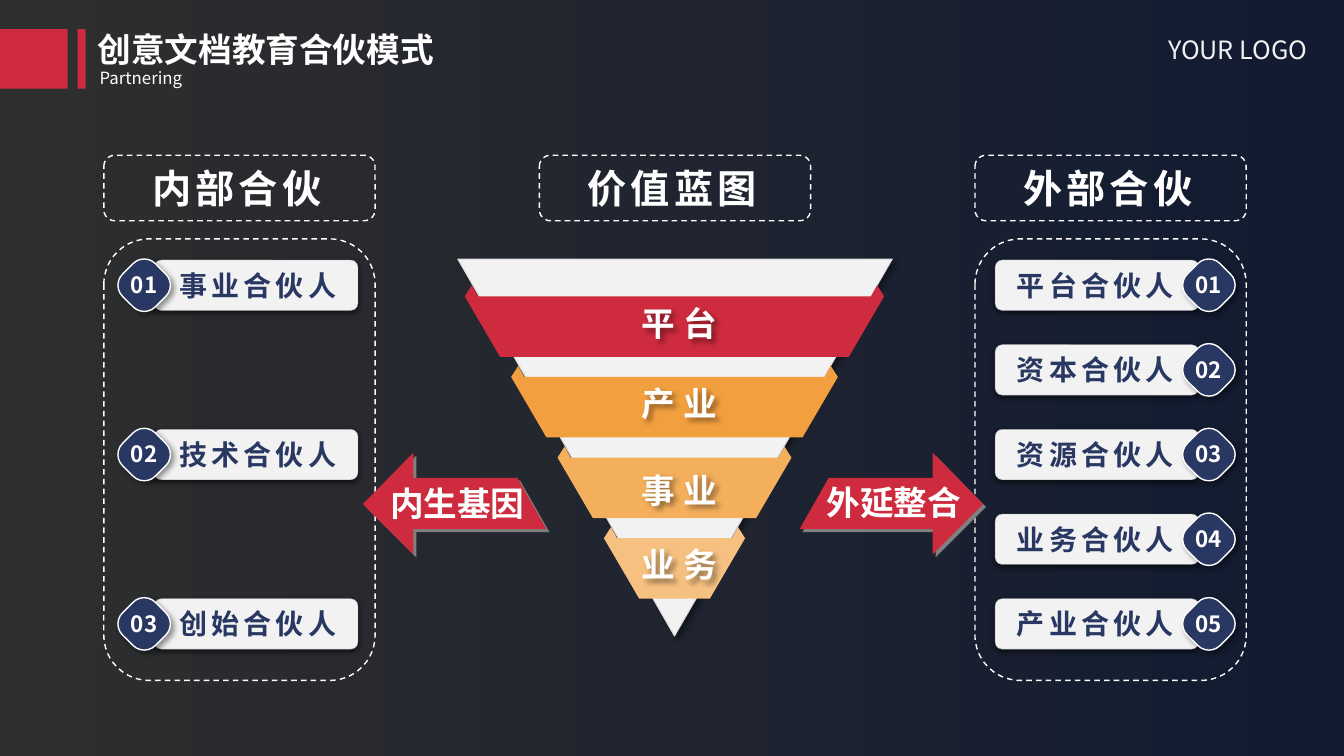
from lxml import etree
from pptx import Presentation, util as u
from pptx.dml.color import RGBColor
from pptx.enum import shapes, text
from pptx.oxml.ns import qn

WIDE, HIGH = 13.33, 7.5
SANS = "Noto Sans CJK SC"
RED, NAVY, PALE, WHITE = "CE2B3E", "293862", "F2F2F2", "FFFFFF"
RECT, ROUND = shapes.MSO_SHAPE.RECTANGLE, shapes.MSO_SHAPE.ROUNDED_RECTANGLE
LEFT, MID = text.PP_ALIGN.LEFT, text.PP_ALIGN.CENTER

HEADS = [("内部合伙", 1.03), ("价值蓝图", 5.35), ("外部合伙", 9.67)]
PANELS = [
    (1.03, 1.53, 1.60, 1.20, 2, ["事业合伙人", "技术合伙人", "创始合伙人"]),
    (9.67, 9.87, 9.91, 11.76, 1,
     ["平台合伙人", "资本合伙人", "资源合伙人", "业务合伙人", "产业合伙人"]),
]
BANDS = [("平台", RED, 2.96), ("产业", "F29F3F", 3.75),
         ("事业", "F4AF5C", 4.61), ("业务", "F6C180", 5.35)]
ARROW = [(3.6, 5), (4.1, 4.49), (4.1, 4.74), (5.13, 4.74),
         (5.42, 5.25), (4.1, 5.25), (4.1, 5.5)]
ARROWS = [("内生基因", False, 3.65, 4.74, 1.77), ("外延整合", True, 8.03, 4.73, 1.67)]
AXIS, ROW = 6.69, 0.84
SOFT = ("000000", 40, 4, 3, 45)
LOW = ("000000", 63, 4.5, 1.5, 90)
HARD = ("808080", 100, 0, 3, 45)

deck = Presentation()
deck.slide_width, deck.slide_height = u.Inches(WIDE), u.Inches(HIGH)
page = deck.slides.add_slide(deck.slide_layouts[6])


def tint(code):
    return RGBColor.from_string(code)


def shade(item, cast):
    item.shadow.inherit = False
    if cast:
        code, alpha, blur, dist, ang = cast
        fx = item._element.spPr.find(qn("a:effectLst"))
        out = etree.SubElement(
            fx, qn("a:outerShdw"), blurRad=str(int(blur * 12700)),
            dist=str(int(dist * 12700)), dir=str(ang * 60000),
            algn="ctr", rotWithShape="0")
        clr = etree.SubElement(out, qn("a:srgbClr"), val=code)
        etree.SubElement(clr, qn("a:alpha"), val=str(alpha * 1000))


def paint(item, fill=None, line=None, width=1, cast=None, dash=False):
    if fill:
        item.fill.solid()
        item.fill.fore_color.rgb = tint(fill)
    else:
        item.fill.background()
    if line:
        item.line.color.rgb = tint(line)
        item.line.width = u.Pt(width)
        if dash:
            item.line._get_or_add_ln().get_or_add_prstDash().set("val", "dash")
    else:
        item.line.fill.background()
    shade(item, cast)
    return item


def block(kind, x, y, w, h, adj=None, **look):
    item = page.shapes.add_shape(kind, *map(u.Inches, (x, y, w, h)))
    if adj:
        item.adjustments[0] = adj
    return paint(item, **look)


def outline(dots, **look):
    spots = [(u.Inches(x), u.Inches(y)) for x, y in dots]
    pen = page.shapes.build_freeform(*spots[0])
    pen.add_line_segments(spots[1:], close=True)
    return paint(pen.convert_to_shape(), **look)


def label(words, x, y, w, h, size, color=WHITE, bold=True, gap=0,
          align=MID, wrap=True, face=SANS, cast=None):
    box = page.shapes.add_textbox(*map(u.Inches, (x, y, w, h)))
    box.text_frame.word_wrap = wrap
    para = box.text_frame.paragraphs[0]
    para.text, para.alignment = words, align
    font = para.font
    font.size, font.bold, font.name = u.Pt(size), bold, face
    font.color.rgb = tint(color)
    etree.SubElement(font._rPr, qn("a:ea"), typeface=face)
    if gap:
        font._rPr.set("spc", str(gap * 100))
    if cast:
        shade(box, cast)


def panel(x, pill, name, badge, step, names):
    block(ROUND, x, 2.37, 2.69, 4.38, line=WHITE, dash=True)
    for i, words in enumerate(names):
        y = 2.58 + i * step * ROW
        block(ROUND, pill, y, 2.02, 0.5, 0.14, fill=PALE,
              line="A7ABB7", width=0.25, cast=LOW)
        label(words, name, y + 0.03, 1.91, 0.44, 20, NAVY, gap=3)
        gem = block(ROUND, badge, y + 0.02, 0.46, 0.46, 0.34,
                    fill=NAVY, line=WHITE, cast=SOFT)
        gem.rotation = 45
        label(f"{i + 1:02}", badge - 0.04, y + 0.06, 0.54, 0.37, 16)


def funnel():
    outline([(4.54, 2.57), (8.85, 2.57), (AXIS, 6.31)],
            fill=PALE, line="D9D9D9", width=0.75, cast=SOFT)
    for i, (words, color, top) in enumerate(BANDS):
        y, half = 2.94 + i * 0.8, 2.08 - i * 0.46
        side = [(half - 0.13, y), (half - 0.07, y - 0.11),
                (half, y), (half - 0.35, y + 0.6)]
        right = [(AXIS + dx, dy) for dx, dy in side]
        left = [(AXIS - dx, dy) for dx, dy in reversed(side)]
        outline(right + left, fill=color)
        label(words, 5.87, top, 1.74, 0.5, 24, gap=6, face="Roboto", cast=SOFT)


back = page.background.fill
back.gradient()
back.gradient_angle = 0
for stop, code in zip(back.gradient_stops, ("2E2E2E", "121B31")):
    stop.color.rgb = tint(code)

for x, w in ((-0.01, 0.68), (0.77, 0.08)):
    block(RECT, x, 0.29, w, 0.59, fill=RED)
label("创意文档教育合伙模式", 0.87, 0.24, 8.39, 0.51, 24, align=LEFT)
label("Partnering", 0.89, 0.62, 7.3, 0.3, 12, bold=False, align=LEFT)
label("YOUR LOGO", 11.48, 0.29, 1.59, 0.4, 18, PALE, False,
      wrap=False, face="Noto Sans CJK JP")

for words, x in HEADS:
    block(ROUND, x, 1.54, 2.69, 0.65, line=WHITE, dash=True)
    label(words, x + 0.38, 1.58, 1.94, 0.57, 28, gap=3, align=LEFT, wrap=False)
funnel()
for side in PANELS:
    panel(*side)
for words, flip, x, y, w in ARROWS:
    dots = [(13.35 - dx if flip else dx, dy) for dx, dy in ARROW]
    outline(dots, fill=RED, cast=HARD)
    label(words, x, y, w, 0.5, 24)

deck.save("out.pptx")
